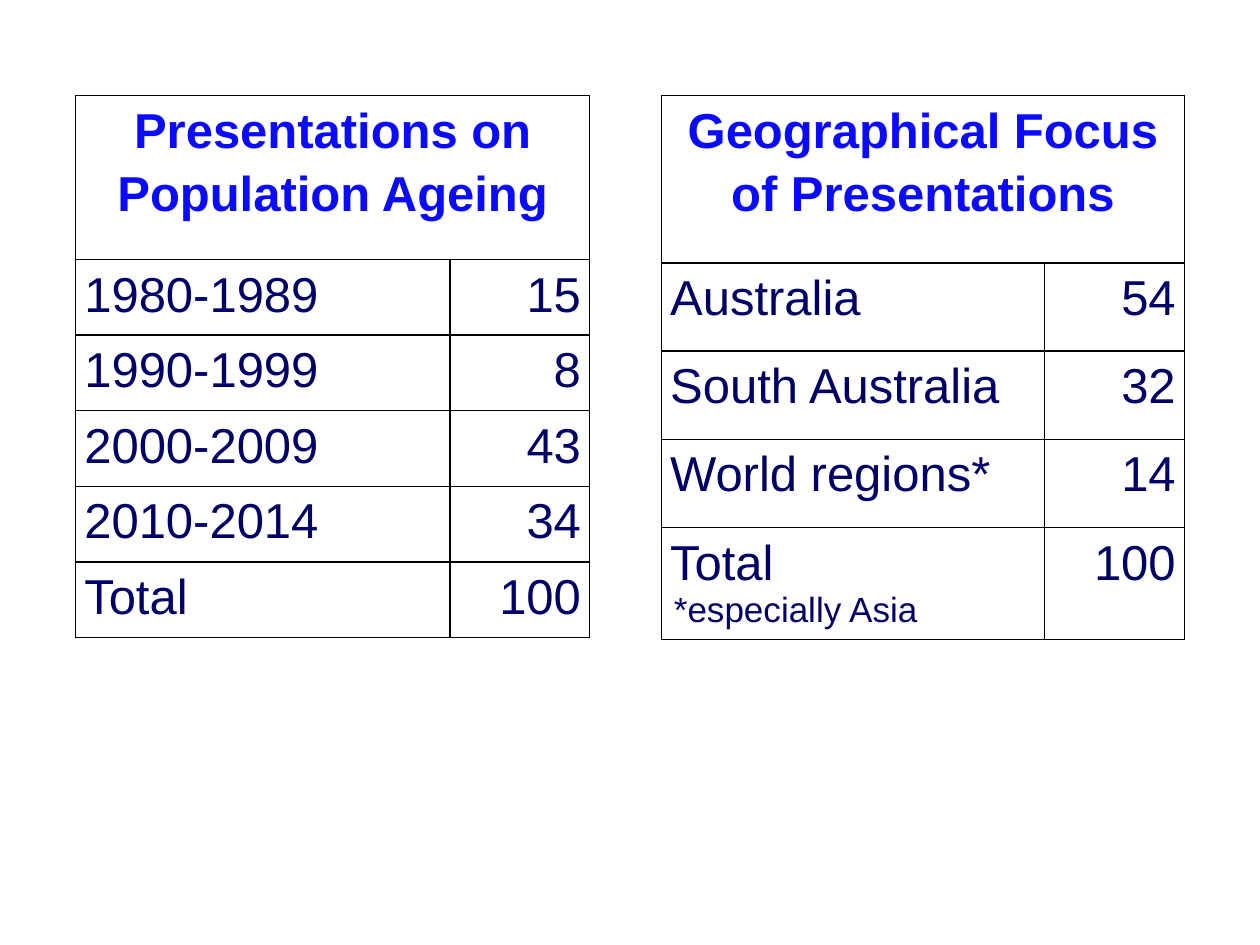
from lxml import etree
from pptx import Presentation
from pptx import util as u
from pptx.dml.color import RGBColor
from pptx.enum import text
from pptx.oxml import ns

Pt = u.Pt
BLUE = RGBColor(0x0A, 0x0A, 0xFF)
NAVY = RGBColor(0x00, 0x00, 0x66)
BLACK = RGBColor(0, 0, 0)
LEFT, MID, RIGHT = text.PP_ALIGN.LEFT, text.PP_ALIGN.CENTER, text.PP_ALIGN.RIGHT

TOP = 54.72
LAST = 79.92  # width of the number column
AGES = [("1980-1989", 15), ("1990-1999", 8), ("2000-2009", 43),
        ("2010-2014", 34), ("Total", 100)]
PLACES = [("Australia", 54), ("South Australia", 32),
          ("World regions*", 14), ("Total", 100)]


def assign(item, **vals):
    for key, val in vals.items():
        setattr(item, key, val)


class Board:
    font = "Arial"
    size = 28
    edge = 1

    def __init__(self, slide):
        self.slide = slide

    def label(self, frame, words, color, align=LEFT, **vals):
        par = frame.paragraphs[0]
        par.alignment = align
        run = par.add_run()
        run.text = words
        assign(run.font, **{"name": self.font, "size": Pt(self.size),
                            "bold": False, **vals})
        run.font.color.rgb = color
        return par

    def border(self, cell):
        """Draw all four edges; they must come before the cell fill."""
        props = cell._tc.get_or_add_tcPr()
        for side in ("a:lnL", "a:lnR", "a:lnT", "a:lnB"):
            line = etree.SubElement(props, ns.qn(side), w=str(Pt(self.edge)))
            fill = etree.SubElement(line, ns.qn("a:solidFill"))
            etree.SubElement(fill, ns.qn("a:srgbClr"), val=str(BLACK))

    def fill(self, cell, words, color, align, **vals):
        assign(cell, margin_left=Pt(5), margin_right=Pt(5),
               margin_top=0, margin_bottom=0)
        par = self.label(cell.text_frame, words, color, align, **vals)
        par.line_spacing = 1.15

    def table(self, left, first, title, data, tall):
        """Place a titled table; first is the label column's width, tall the row heights."""
        grid = self.slide.shapes.add_table(
            len(tall), 2, Pt(left), Pt(TOP), Pt(first + LAST), Pt(sum(tall))).table
        assign(grid, first_row=False, horz_banding=False)
        for col, wide in zip(grid.columns, (first, LAST)):
            col.width = Pt(wide)
        for row, high in zip(grid.rows, tall):
            row.height = Pt(high)
        for cell in grid.iter_cells():
            self.border(cell)
            cell.fill.background()
        head = grid.cell(0, 0)
        head.merge(grid.cell(0, 1))
        self.fill(head, title, BLUE, MID, bold=True)
        for row, (name, count) in enumerate(data, 1):
            self.fill(grid.cell(row, 0), name, NAVY, LEFT)
            self.fill(grid.cell(row, 1), str(count), NAVY, RIGHT)

    def note(self, left, top, wide, high, words):
        frame = self.slide.shapes.add_textbox(
            Pt(left), Pt(top), Pt(wide), Pt(high)).text_frame
        assign(frame, word_wrap=True, vertical_anchor=text.MSO_ANCHOR.MIDDLE,
               auto_size=text.MSO_AUTO_SIZE.SHAPE_TO_FIT_TEXT)
        self.label(frame, words, NAVY, size=Pt(20))


def main():
    deck = Presentation()
    assign(deck, slide_width=Pt(720), slide_height=Pt(540))
    board = Board(deck.slides.add_slide(deck.slide_layouts[6]))
    board.table(43.2, 213.84, "Presentations on Population Ageing", AGES,
                [93.6] + [43.2] * 5)
    board.table(378, 218.88, "Geographical Focus of Presentations", PLACES,
                [95.6] + [50.4] * 3 + [64])
    board.note(378, 331.92, 210.24, 31.68, "*especially Asia")
    deck.save("out.pptx")


if __name__ == "__main__":
    main()
